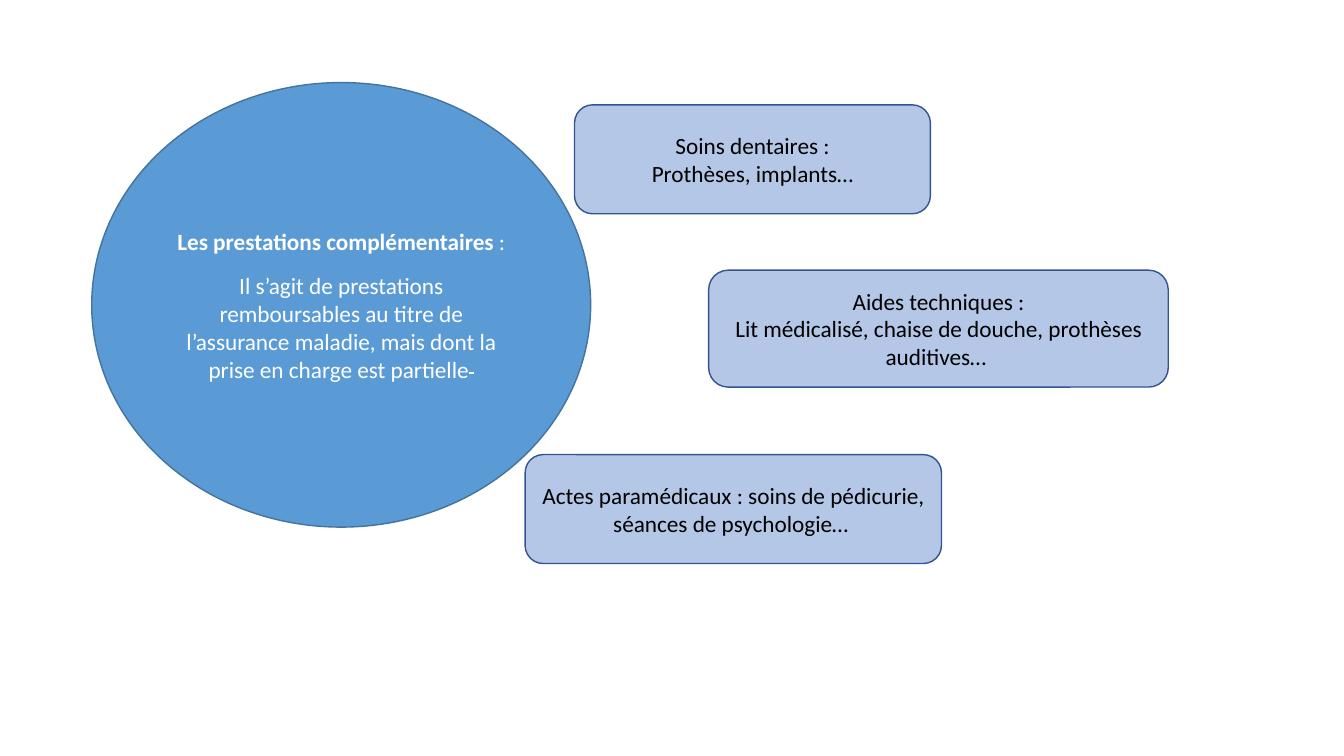
from dataclasses import dataclass

from pptx import Presentation
from pptx.dml.color import RGBColor
from pptx.enum import shapes, text
from pptx.util import Pt


@dataclass(frozen=True)
class Theme:
    font: str = "Calibri"
    size: float = 16.6
    blue: str = "5B9BD5"
    edge: str = "43739E"
    pale: str = "B4C7E7"
    rim: str = "325491"
    white: str = "FFFFFF"
    black: str = "000000"


theme = Theme()
kinds = shapes.MSO_SHAPE


def write(par, words, color=theme.black, bold=False, strike=False):
    run = par.add_run()
    run.text = words
    run.font.name = theme.font
    run.font.size = Pt(theme.size)
    run.font.bold = bold
    run.font.color.rgb = RGBColor.from_string(color)
    if strike:
        run._r.get_or_add_rPr().set("strike", "sngStrike")


def draw(kind, place, fill, line, count):
    """Add a filled shape and return its centred, empty paragraphs."""
    shape = slide.shapes.add_shape(kind, *map(Pt, place))
    shape.shadow.inherit = False
    shape.fill.solid()
    shape.fill.fore_color.rgb = RGBColor.from_string(fill)
    shape.line.color.rgb = RGBColor.from_string(line)
    shape.line.width = Pt(1)
    frame = shape.text_frame
    frame.word_wrap = True
    frame.vertical_anchor = text.MSO_ANCHOR.MIDDLE
    for _ in range(count - 1):
        frame.add_paragraph()
    for par in frame.paragraphs:
        par.alignment = text.PP_ALIGN.CENTER
    return frame.paragraphs


deck = Presentation()
deck.slide_width, deck.slide_height = Pt(960), Pt(540)
slide = deck.slides.add_slide(deck.slide_layouts[6])

# Main circle
head, body = draw(kinds.OVAL, (65.5, 59, 356.4, 317.5), theme.blue, theme.edge, 2)
write(head, "Les prestations complémentaires ", color=theme.white, bold=True)
write(head, ": ", color=theme.white)
body.space_before = Pt(11.8)
write(body, "Il s’agit de prestations remboursables au titre de l’assurance "
      "maladie, mais dont la prise en charge est partielle", color=theme.white)
write(body, " ", color=theme.white, strike=True)

# Examples of benefits
boxes = [
    ((410.4, 74.9, 254.2, 77.8), ["Soins dentaires :", "Prothèses, implants…"]),
    ((506.2, 193, 328.3, 83.5),
     ["Aides techniques :",
      "Lit médicalisé, chaise de douche, prothèses auditives… "]),
    ((375.1, 324.7, 297.4, 77.8),
     ["Actes paramédicaux : soins de pédicurie, séances de psychologie… "]),
]
for place, lines in boxes:
    pars = draw(kinds.ROUNDED_RECTANGLE, place, theme.pale, theme.rim, len(lines))
    for par, words in zip(pars, lines):
        write(par, words)

deck.save("out.pptx")
